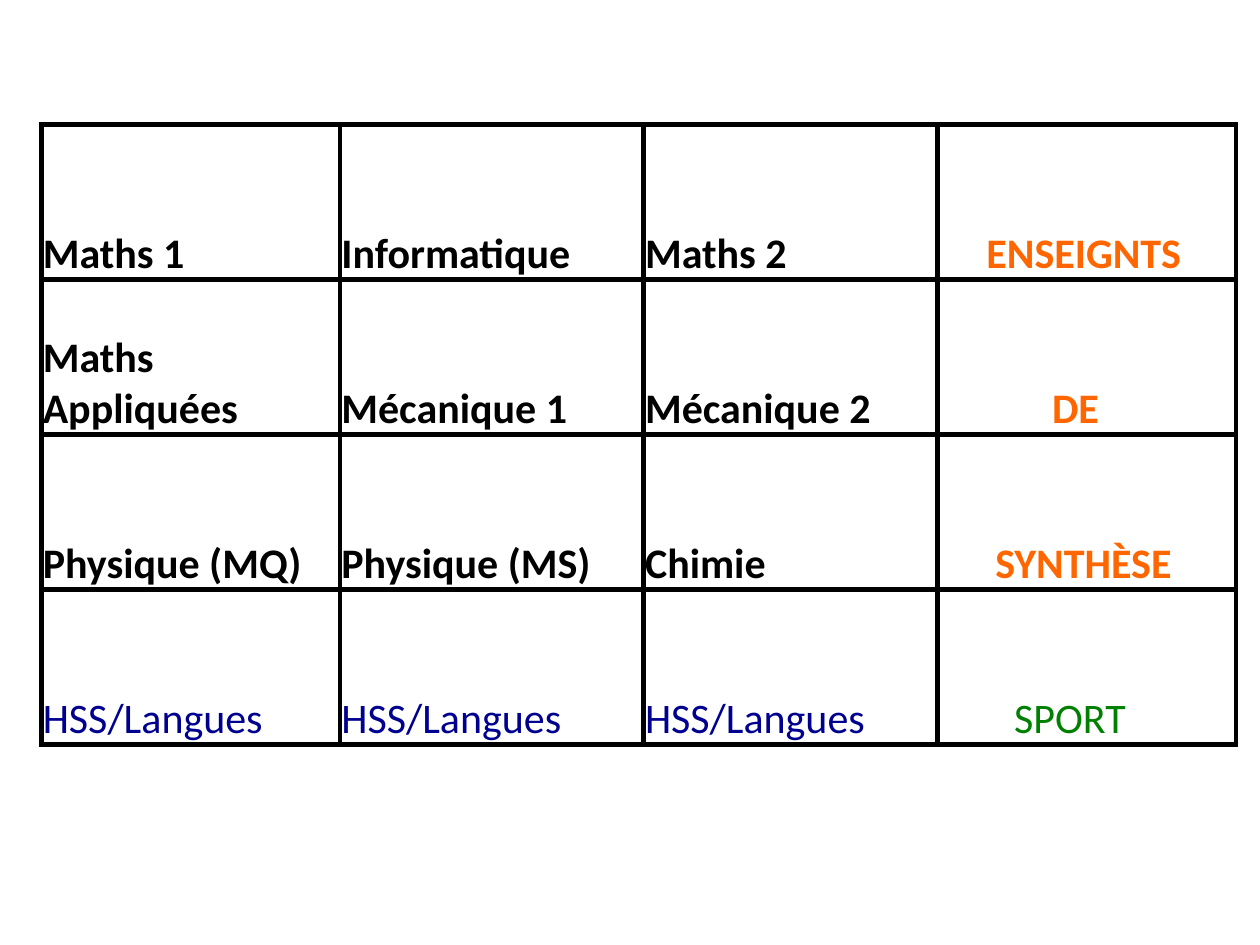
import pptx
import pptx.dml.color
import pptx.enum.text
import pptx.oxml
import pptx.oxml.ns
import pptx.util

COLORS = {"course": "000000", "synthesis": "FF6600", "languages": "000090", "sport": "008000", "border": "000000"}
FONT = {"name": "Calibri", "size": pptx.util.Pt(24)}
CELL = {
    "vertical_anchor": pptx.enum.text.MSO_ANCHOR.BOTTOM,
    "margin_left": pptx.util.Inches(0.01),
    "margin_right": pptx.util.Inches(0.01),
    "margin_top": pptx.util.Inches(0.01),
    "margin_bottom": 0,
}
TABLE = {"first_row": False, "horz_banding": False}
COLUMN_WIDTHS = [2.37, 2.41, 2.33, 2.37]
ROW_HEIGHT = 1.23
COURSES = [
    ["Maths 1", "Informatique", "Maths 2"],
    ["Maths Appliquées", "Mécanique 1", "Mécanique 2"],
    ["Physique (MQ)", "Physique (MS)", "Chimie"],
    ["HSS/Langues"] * 3,
]
LAST_COLUMN = [("ENSEIGNTS", 0.38), ("DE", 0.9), ("SYNTHÈSE", 0.45), ("SPORT", 0.6)]


def set_format(target, values):
    """Set each attribute of the target from a dict."""
    for name, value in values.items():
        setattr(target, name, value)


class TimetableSlide:
    """Hold the style and the current slide."""

    def __init__(self, presentation):
        """Add a blank slide."""
        self.slide = presentation.slides.add_slide(presentation.slide_layouts[6])

    def add_table(self, left, top, widths, row_height, row_count):
        """Add an unbanded table with the given column widths."""
        lengths = [left, top, sum(widths), row_height * row_count]
        frame = self.slide.shapes.add_table(row_count, len(widths), *map(pptx.util.Inches, lengths))
        set_format(frame.table, TABLE)
        for column, width in zip(frame.table.columns, widths):
            column.width = pptx.util.Inches(width)
        return frame.table

    def fill_cell(self, cell, text, color, bold, indent=0):
        """Write and format one cell."""
        set_format(cell, CELL)
        cell.fill.background()
        self.add_borders(cell)
        paragraph = cell.text_frame.paragraphs[0]
        paragraph._p.get_or_add_pPr().set("marL", str(pptx.util.Inches(indent)))
        run = paragraph.add_run()
        run.text = text
        set_format(run.font, {**FONT, "bold": bold})
        run.font.color.rgb = pptx.dml.color.RGBColor.from_string(COLORS[color])

    def add_borders(self, cell):
        """Draw a solid line on all four sides of a cell."""
        properties = cell._tc.get_or_add_tcPr()
        for position, side in enumerate("LRTB"):
            line = pptx.oxml.parse_xml(
                f'<a:ln{side} {pptx.oxml.ns.nsdecls("a")} w="{pptx.util.Pt(3)}"><a:solidFill>'
                f'<a:srgbClr val="{COLORS["border"]}"/></a:solidFill></a:ln{side}>'
            )
            properties.insert(position, line)


def main():
    """Build and save the timetable."""
    presentation = pptx.Presentation()
    set_format(presentation, {"slide_width": pptx.util.Inches(10), "slide_height": pptx.util.Inches(7.5)})
    timetable = TimetableSlide(presentation)
    table = timetable.add_table(0.33, 0.99, COLUMN_WIDTHS, ROW_HEIGHT, len(COURSES))
    for row, (courses, (label, indent)) in enumerate(zip(COURSES, LAST_COLUMN)):
        bold = row < len(COURSES) - 1
        course_color, label_color = ("course", "synthesis") if bold else ("languages", "sport")
        for column, course in enumerate(courses):
            timetable.fill_cell(table.cell(row, column), course, course_color, bold)
        timetable.fill_cell(table.cell(row, len(courses)), label, label_color, bold, indent)
    presentation.save("out.pptx")


if __name__ == "__main__":
    main()
